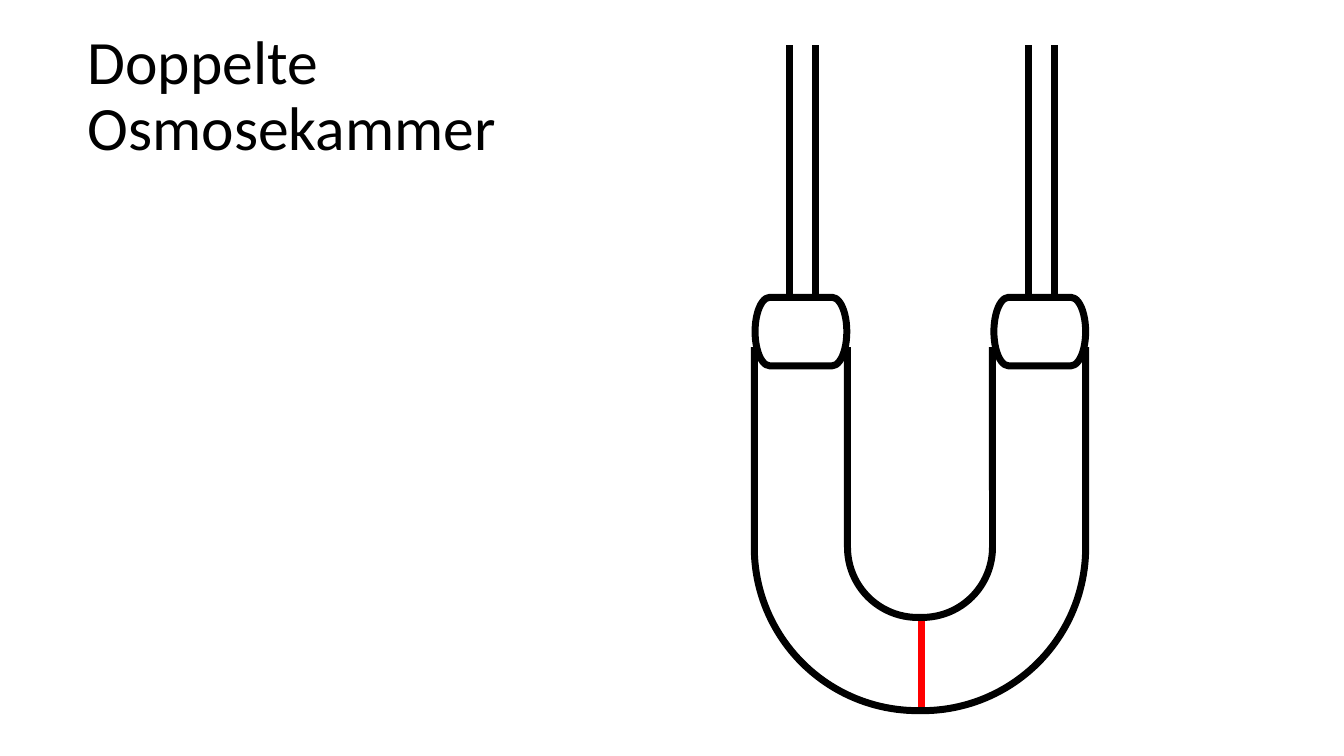
from pptx import Presentation
from pptx.dml.color import RGBColor
from pptx.enum.shapes import MSO_CONNECTOR, MSO_SHAPE
from pptx.oxml.ns import qn
from pptx.util import Inches, Pt
from lxml.etree import SubElement

WIDE, HIGH = Inches(13.333), Inches(7.5)
BLACK, WHITE, RED = "000000", "FFFFFF", "FF0000"
STROKE = 5
CAP_TOP = 39.33


def across(share):
    return int(WIDE * share / 100)


def down(share):
    return int(HIGH * share / 100)


def frame(left, top, width, height):
    return across(left), down(top), across(width), down(height)


def color(code):
    return RGBColor.from_string(code)


def ink(item, code):
    item.line.color.rgb = color(code)
    item.line.width = Pt(STROKE)


def add_line(slide, x, top, end, code=BLACK):
    line = slide.shapes.add_connector(
        MSO_CONNECTOR.STRAIGHT, across(x), down(top), across(x), down(end))
    ink(line, code)
    SubElement(line._element.spPr, qn("a:effectLst"))


def add_form(slide, kind, box, edge=BLACK, fill=WHITE):
    form = slide.shapes.add_shape(kind, *frame(*box))
    form.shadow.inherit = False
    if fill:
        form.fill.solid()
        form.fill.fore_color.rgb = color(fill)
    else:
        form.fill.background()
    ink(form, edge)
    return form


def add_bend(slide):
    bend = add_form(slide, MSO_SHAPE.U_TURN_ARROW,
                    (52.65, 44.67, 28.13, 49.33), fill=None)
    bend.rotation = 180
    for index, value in enumerate((0.25, 0.25, 0, 0.438, 1)):
        bend.adjustments[index] = value


def add_leg(slide, left):
    add_form(slide, MSO_SHAPE.FLOWCHART_TERMINATOR, (left, CAP_TOP, 6.83, 9.07))
    for shift in (2.58, 4.53):
        add_line(slide, left + shift, 6, CAP_TOP)


def add_title(slide, text, box):
    title = slide.shapes.add_textbox(*frame(*box))
    title.text_frame.word_wrap = True
    title.text_frame.text = text
    lead = title.text_frame.paragraphs[0]
    lead.line_spacing = 0.9
    font = lead.runs[0].font
    font.name = "Calibri"
    font.size = Pt(44)
    font.color.rgb = color(BLACK)


def main():
    deck = Presentation()
    deck.slide_width, deck.slide_height = WIDE, HIGH
    slide = deck.slides.add_slide(deck.slide_layouts[6])
    add_line(slide, 68.55, 81.6, 93.87, RED)
    add_bend(slide)
    add_form(slide, MSO_SHAPE.RECTANGLE, (50.03, 40.13, 35.78, 5.33), WHITE)
    for left in (56.18, 73.95):
        add_leg(slide, left)
    add_title(slide, "Doppelte Osmosekammer", (5.78, 3.47, 32.78, 41.2))
    deck.save("out.pptx")


if __name__ == "__main__":
    main()
